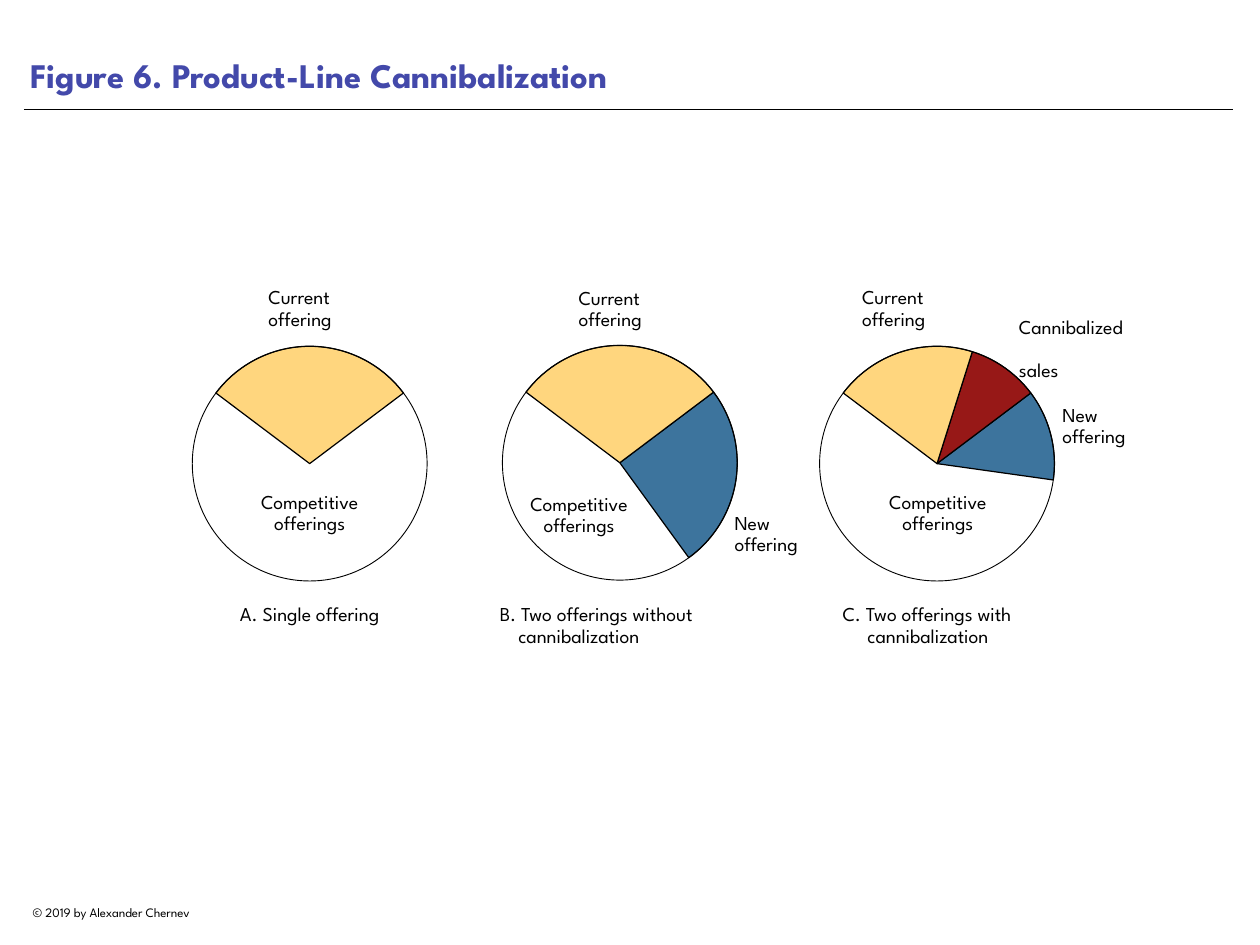
"""Build the product-line cannibalization slide with three market-share pies."""
from dataclasses import dataclass

import pptx
import pptx.dml.color
import pptx.enum.shapes
import pptx.enum.text
import pptx.util
from pptx.util import Inches

RGBColor = pptx.dml.color.RGBColor
Align = pptx.enum.text.PP_ALIGN
Preset = pptx.enum.shapes.MSO_SHAPE


@dataclass(frozen=True)
class Theme:
    """Font, colours and point sizes of the slide."""
    font: str = "League Spartan"
    ink: RGBColor = RGBColor(0x00, 0x00, 0x00)
    title: RGBColor = RGBColor(0x43, 0x49, 0xAA)
    current: RGBColor = RGBColor(0xFF, 0xD6, 0x7E)
    new: RGBColor = RGBColor(0x3D, 0x74, 0x9D)
    cannibalized: RGBColor = RGBColor(0x97, 0x18, 0x17)
    title_size: float = 28
    label_size: float = 16
    footer_size: float = 10.5
    label_spacing: float = 0.9
    wedge_line: float = 1
    circle_line: float = 0.75
    rule_line: float = 0.5


THEME = Theme()
DIAMETER = 2.65
LABEL_HEIGHT = 0.59
CAPTION_TOP = 6.83
CAPTION_WIDTH = 2.61
WEDGE_LEFT, WEDGE_RIGHT = 217, 323


def style_font(paragraph, size, color=THEME.ink, bold=False):
    """Set the theme font on a paragraph."""
    paragraph.font.name = THEME.font
    paragraph.font.size = pptx.util.Pt(size)
    paragraph.font.color.rgb = color
    paragraph.font.bold = bold


def set_insets(text_frame, inset):
    """Give a text frame the same inset on all sides."""
    text_frame.margin_left = text_frame.margin_right = Inches(inset)
    text_frame.margin_top = text_frame.margin_bottom = Inches(inset)


def add_label(shapes, text, left, top, width, align=Align.LEFT):
    """Add a label and return its paragraphs."""
    box = shapes.add_textbox(Inches(left), Inches(top), Inches(width), Inches(LABEL_HEIGHT))
    text_frame = box.text_frame
    text_frame.word_wrap = True
    set_insets(text_frame, 0)
    text_frame.text = text
    for paragraph in text_frame.paragraphs:
        paragraph.alignment = align
        paragraph.line_spacing = THEME.label_spacing
        style_font(paragraph, THEME.label_size)
    return text_frame.paragraphs


def add_round(shapes, preset, left, top, line_width, color=None):
    """Add a circle or wedge, left unfilled when no colour is given."""
    shape = shapes.add_shape(preset, Inches(left), Inches(top), Inches(DIAMETER), Inches(DIAMETER))
    shape.shadow.inherit = False
    shape.line.color.rgb = THEME.ink
    shape.line.width = pptx.util.Pt(line_width)
    if color is None:
        shape.fill.background()
    else:
        shape.fill.solid()
        shape.fill.fore_color.rgb = color
    return shape


def add_pie(slide, left, top, wedges, labels):
    """Add a grouped pie whose wedges run clockwise between angles in degrees."""
    shapes = slide.shapes.add_group_shape().shapes
    for color, start, end in wedges:
        wedge = add_round(shapes, Preset.PIE, left, top, THEME.wedge_line, color)
        for index, angle in enumerate((start, end)):
            wedge.adjustments[index] = angle * 60000 / 100000
    add_round(shapes, Preset.OVAL, left, top, THEME.circle_line)
    for label in labels:
        add_label(shapes, *label)
    return shapes


def add_caption(slide, text, left, indent=0, align=Align.LEFT):
    """Add a caption under a pie, with its second line indented."""
    paragraphs = add_label(slide.shapes, text, left, CAPTION_TOP, CAPTION_WIDTH, align)
    for paragraph in paragraphs[1:]:
        paragraph._p.get_or_add_pPr().set("marL", str(Inches(indent)))


def add_title(slide, text):
    """Fill and place the title, and draw the rule beneath it."""
    title = slide.shapes.title
    title.left, title.top = Inches(0.27), Inches(0)
    title.width, title.height = Inches(13.64), Inches(1.15)
    text_frame = title.text_frame
    text_frame.text = text
    text_frame.word_wrap = True
    text_frame.auto_size = pptx.enum.text.MSO_AUTO_SIZE.NONE
    text_frame.vertical_anchor = pptx.enum.text.MSO_ANCHOR.BOTTOM
    set_insets(text_frame, 0.07)
    paragraph = text_frame.paragraphs[0]
    paragraph.alignment = Align.LEFT
    style_font(paragraph, THEME.title_size, THEME.title, bold=True)

    rule = slide.shapes.add_connector(
        pptx.enum.shapes.MSO_CONNECTOR.STRAIGHT,
        Inches(0.27), Inches(1.24), Inches(13.92), Inches(1.24))
    rule.line.color.rgb = THEME.ink
    rule.line.width = pptx.util.Pt(THEME.rule_line)
    properties = rule._element.spPr
    properties.append(pptx.oxml.parse_xml(
        '<a:effectLst xmlns:a="http://schemas.openxmlformats.org/drawingml/2006/main"/>'))


def add_footer(slide, text):
    """Add the copyright line."""
    box = slide.shapes.add_textbox(Inches(0.27), Inches(10.16), Inches(2.34), Inches(0.28))
    box.text_frame.word_wrap = True
    box.text_frame.text = text
    style_font(box.text_frame.paragraphs[0], THEME.footer_size)


def main():
    """Build and save the slide."""
    presentation = pptx.Presentation()
    presentation.slide_width, presentation.slide_height = Inches(14.22), Inches(10.67)
    slide = presentation.slides.add_slide(presentation.slide_layouts[5])
    add_title(slide, "Figure 6. Product-Line Cannibalization")

    current, new, competitive = "Current\voffering", "New\voffering", "Competitive\vofferings"
    current_wedge = (THEME.current, WEDGE_LEFT, WEDGE_RIGHT)
    add_pie(slide, 2.17, 3.91, [current_wedge], [
        (competitive, 2.74, 5.56, 1.51, Align.CENTER),
        (current, 3.03, 3.25, 0.94),
    ])
    add_pie(slide, 5.67, 3.9, [(THEME.new, WEDGE_RIGHT, 54), current_wedge], [
        (competitive, 5.78, 5.58, 1.51, Align.CENTER),
        (current, 6.53, 3.26, 0.94),
        (new, 8.29, 5.8, 1.07),
    ])
    overlap_pie = add_pie(slide, 9.25, 3.91, [
        (THEME.new, WEDGE_RIGHT, 8),
        (THEME.cannibalized, 287.5, WEDGE_RIGHT),
        (THEME.current, WEDGE_LEFT, 287.5),
    ], [
        (competitive, 9.83, 5.56, 1.51, Align.CENTER),
        (new, 11.99, 4.58, 1.07),
        (current, 9.73, 3.25, 0.94),
    ])
    cannibalized = add_label(overlap_pie, "Cannibalized\nsales", 11.5, 3.59, 1.51)
    cannibalized[0].space_after = pptx.util.Pt(17)

    add_caption(slide, "A. Single offering", 2.19, align=Align.CENTER)
    add_caption(slide, "B. Two offerings without\ncannibalization", 5.64, 0.21)
    add_caption(slide, "C. Two offerings with\ncannibalization", 9.51, 0.28)
    add_footer(slide, "© 2019 by Alexander Chernev")
    presentation.save("out.pptx")


if __name__ == "__main__":
    main()
